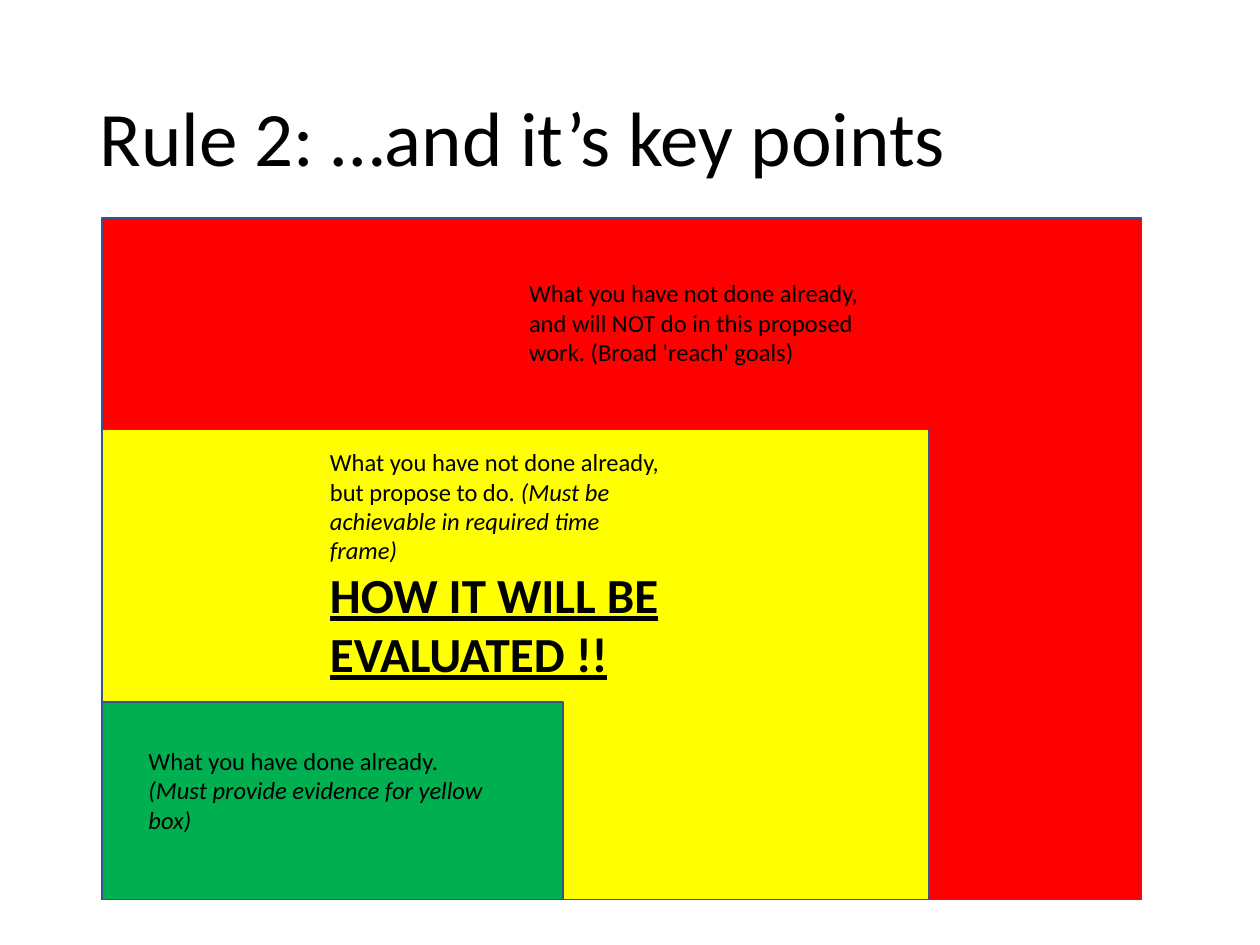
from pptx import Presentation
from pptx.dml.color import RGBColor
from pptx.enum.shapes import MSO_SHAPE as Shape
from pptx.enum.text import MSO_ANCHOR as Anchor
from pptx.util import Inches, Pt

BLACK = RGBColor(0x00, 0x00, 0x00)
RED = RGBColor(0xFF, 0x00, 0x00)
YELLOW = RGBColor(0xFF, 0xFF, 0x00)
GREEN = RGBColor(0x00, 0xB0, 0x50)
OUTLINE = RGBColor(0x32, 0x54, 0x91)
FONT = "Calibri"
NOTE_WIDTH = 2.88


def style(paragraph, size):
    paragraph.font.name = FONT
    paragraph.font.size = Pt(size)
    paragraph.font.color.rgb = BLACK


def add_title(slide, left, top, width, height, text):
    frame = slide.shapes.add_textbox(
        Inches(left), Inches(top), Inches(width), Inches(height)).text_frame
    frame.word_wrap = True
    frame.vertical_anchor = Anchor.MIDDLE
    paragraph = frame.paragraphs[0]
    paragraph.text = text
    paragraph.line_spacing = 0.9
    style(paragraph, 44)


def add_nested_boxes(slide, left, bottom, boxes):
    """Stack boxes that share their lower left corner, largest first."""
    for width, height, color in boxes:
        box = slide.shapes.add_shape(
            Shape.RECTANGLE, Inches(left), Inches(bottom - height),
            Inches(width), Inches(height))
        box.shadow.inherit = False
        box.fill.solid()
        box.fill.fore_color.rgb = color
        box.line.color.rgb = OUTLINE
        box.line.width = Pt(1)


def add_note(slide, left, top, height, text, remark="", emphasis=""):
    """Place a note with an italic remark and a large closing line."""
    frame = slide.shapes.add_textbox(
        Inches(left), Inches(top), Inches(NOTE_WIDTH), Inches(height)).text_frame
    frame.word_wrap = True
    paragraph = frame.paragraphs[0]
    style(paragraph, 14)
    paragraph.add_run().text = text
    if remark:
        run = paragraph.add_run()
        run.text = remark
        run.font.italic = True
    if emphasis:
        closing = frame.add_paragraph()
        closing.text = emphasis
        style(closing, 28)
        closing.font.bold = True
        closing.font.underline = True


def main():
    presentation = Presentation()
    presentation.slide_width = Inches(10)
    presentation.slide_height = Inches(7.5)
    slide = presentation.slides.add_slide(presentation.slide_layouts[6])

    add_title(slide, 0.69, 0.4, 8.62, 1.45, "Rule 2: …and it’s key points")

    # Scope of the work, from broad goals down to finished results
    add_nested_boxes(slide, 0.81, 7.14, [
        (8.25, 5.41, RED),
        (6.56, 3.73, YELLOW),
        (3.66, 1.57, GREEN),
    ])

    # One note for each box
    add_note(slide, 1.08, 5.87, 0.81, "What you have done already. ",
             "(Must provide evidence for yellow box)")
    add_note(slide, 2.52, 3.5, 1.99,
             "What you have not done already, but propose to do. ",
             "(Must be achievable in required time frame)",
             "HOW IT WILL BE EVALUATED !!")
    add_note(slide, 4.1, 2.16, 0.81,
             "What you have not done already, and will NOT do in this "
             "proposed work. (Broad 'reach' goals)")

    presentation.save("out.pptx")


if __name__ == "__main__":
    main()
